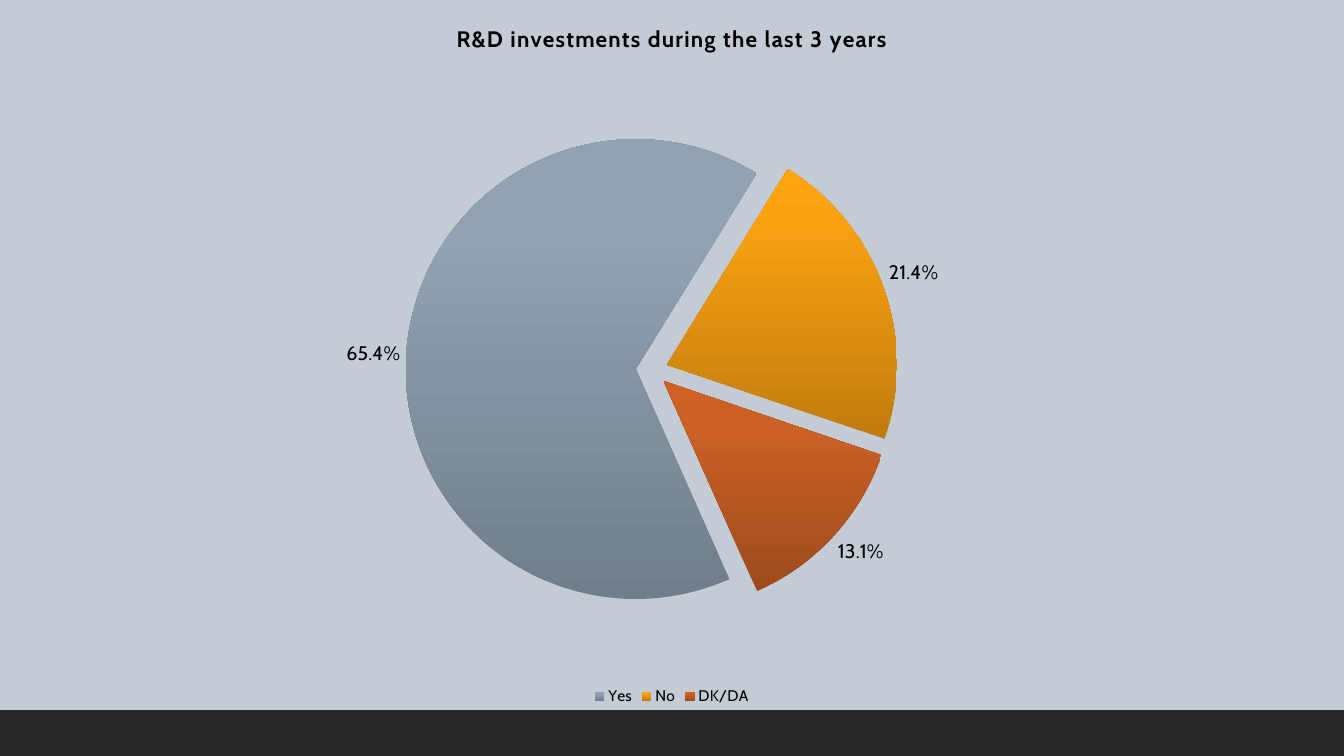
from copy import deepcopy

from pptx import Presentation
from pptx.chart.data import CategoryChartData
from pptx.dml.color import RGBColor
from pptx.enum.chart import XL_CHART_TYPE as ChartType
from pptx.enum.chart import XL_LABEL_POSITION as LabelPosition
from pptx.enum.chart import XL_LEGEND_POSITION as LegendPosition
from pptx.enum.shapes import MSO_SHAPE as Shape
from pptx.oxml import parse_xml
from pptx.oxml.ns import nsdecls
from pptx.util import Pt

PX = 9144000 // 1008
WIDTH, HEIGHT = 1344 * PX, 756 * PX
TITLE = "R&D investments during the last 3 years"
ANSWERS = [
    ("Yes", 65.4, ["717D8C", "92A2B5", "92A3B7"]),
    ("No", 21.4, ["C07C0E", "FAA112", "FFA30E"]),
    ("DK/DA", 13.1, ["9D4B1D", "CC6126", "D06123"]),
]


def color(code):
    return RGBColor.from_string(code)


def style_font(font, size):
    font.name = "Cabin"
    font.size = Pt(size)
    font.color.rgb = color("000000")


presentation = Presentation()
presentation.slide_width = WIDTH
presentation.slide_height = HEIGHT
slide = presentation.slides.add_slide(presentation.slide_layouts[6])

footer_band = slide.shapes.add_shape(Shape.RECTANGLE, 0, 706 * PX, WIDTH, 50 * PX)
footer_band.shadow.inherit = False
footer_band.fill.solid()
footer_band.fill.fore_color.rgb = color("262626")
footer_band.line.fill.background()

chart_data = CategoryChartData()
chart_data.categories = [name for name, share, stops in ANSWERS]
chart_data.add_series(TITLE, [share for name, share, stops in ANSWERS])
chart = slide.shapes.add_chart(ChartType.PIE, 0, 0, WIDTH, 710 * PX, chart_data).chart
style_font(chart.font, 10)

chart.has_title = True
title_paragraph = chart.chart_title.text_frame.paragraphs[0]
title_paragraph.text = TITLE
style_font(title_paragraph.font, 16)
title_paragraph.font.bold = True
for properties in title_paragraph._p.xpath(".//a:defRPr | .//a:rPr"):
    properties.set("spc", "100")

chart.has_legend = True
chart.legend.position = LegendPosition.BOTTOM
chart.legend.include_in_layout = False
style_font(chart.legend.font, 11)

plot = chart.plots[0]
plot.vary_by_categories = True
plot.has_data_labels = True
labels = plot.data_labels
labels.show_value = True
labels.show_percentage = False
labels.number_format = '0.0"%"'
labels.number_format_is_linked = False
labels.position = LabelPosition.OUTSIDE_END
style_font(labels.font, 14)

series = plot.series[0]
for index, (name, share, stops) in enumerate(ANSWERS):
    point = series.points[index]
    fill = point.format.fill
    fill.gradient()
    fill.gradient_angle = 90
    stop_list = series._element.xpath(f"c:dPt[{index + 1}]//a:gsLst")[0]
    stop_list.append(deepcopy(stop_list[-1]))
    for stop, position, code in zip(fill.gradient_stops, (0, 0.8, 1), stops):
        stop.position = position
        stop.color.rgb = color(code)
    point.format.line.fill.background()

series._element.xpath("c:dPt")[0].addprevious(
    parse_xml(f'<c:explosion {nsdecls("c")} val="7"/>')
)

chart_space = chart._chartSpace
pie = chart_space.xpath(".//c:pieChart")[0]
for angle in pie.xpath("c:firstSliceAng"):
    pie.remove(angle)
pie.append(parse_xml(f'<c:firstSliceAng {nsdecls("c")} val="156"/>'))

plot_area = chart_space.xpath(".//c:plotArea")[0]
for layout in plot_area.xpath("c:layout"):
    plot_area.remove(layout)
plot_area.insert(0, parse_xml(
    f'<c:layout {nsdecls("c")}><c:manualLayout><c:layoutTarget val="inner"/>'
    '<c:xMode val="edge"/><c:yMode val="edge"/><c:x val="0.233"/><c:y val="0.175"/>'
    '<c:w val="0.504"/><c:h val="0.693"/></c:manualLayout></c:layout>'
))
chart_space.xpath("c:chart")[0].addnext(parse_xml(
    f'<c:spPr {nsdecls("c", "a")}><a:solidFill><a:srgbClr val="C3CBD4"/></a:solidFill>'
    '<a:ln><a:noFill/></a:ln></c:spPr>'
))

presentation.save("out.pptx")
